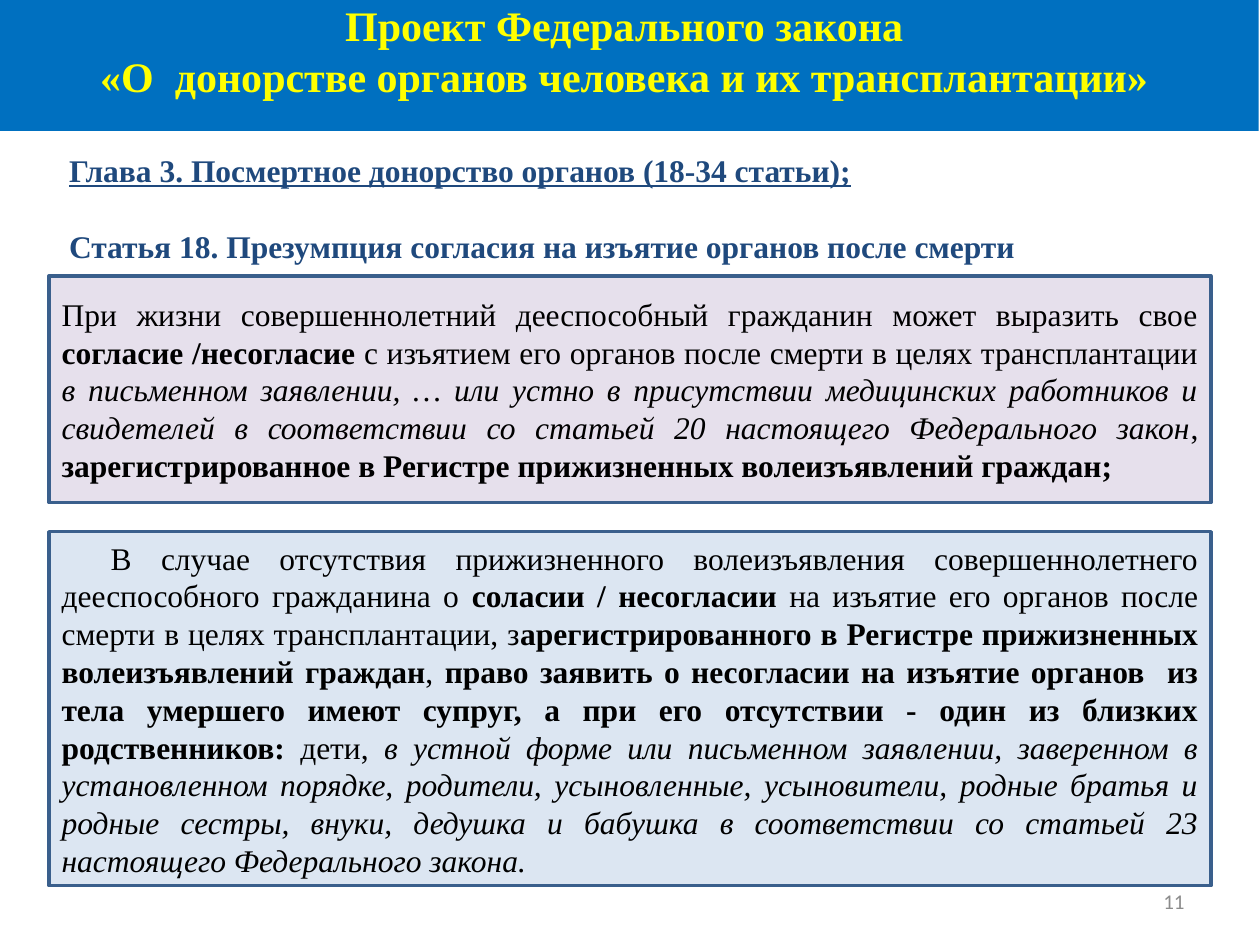
from dataclasses import dataclass
from typing import Optional

import pptx
import pptx.dml.color
import pptx.enum.shapes
import pptx.enum.text
import pptx.util

RGBColor = pptx.dml.color.RGBColor
Inches = pptx.util.Inches
Pt = pptx.util.Pt
Align = pptx.enum.text.PP_ALIGN
Anchor = pptx.enum.text.MSO_ANCHOR

BLUE = RGBColor(0x00, 0x70, 0xC0)
YELLOW = RGBColor(0xFF, 0xFF, 0x00)
NAVY = RGBColor(0x1F, 0x49, 0x7D)
BORDER = RGBColor(0x3A, 0x5F, 0x8C)
LILAC = RGBColor(0xE6, 0xE0, 0xEC)
PALE_BLUE = RGBColor(0xDC, 0xE6, 0xF2)
BLACK = RGBColor(0x00, 0x00, 0x00)
GRAY = RGBColor(0x8C, 0x8C, 0x8C)


@dataclass
class Span:
    text: str
    bold: bool = False
    italic: bool = False


@dataclass
class Panel:
    top: float
    height: float
    fill: RGBColor
    indent: float
    spans: list[Span]


PANELS = [
    Panel(2.19, 1.8, LILAC, 0, [
        Span("При жизни совершеннолетний дееспособный гражданин может выразить свое "),
        Span("согласие /несогласие ", bold=True),
        Span("с изъятием его органов после смерти в целях трансплантации "),
        Span("в письменном заявлении, … или устно в присутствии медицинских работников "
             "и свидетелей в соответствии со статьей 20 настоящего Федерального закон",
             italic=True),
        Span(", "),
        Span("зарегистрированное в Регистре прижизненных волеизъявлений граждан;", bold=True),
    ]),
    Panel(4.22, 2.81, PALE_BLUE, 0.39, [
        Span("В случае отсутствия прижизненного волеизъявления совершеннолетнего "
             "дееспособного гражданина о "),
        Span("соласии / несогласии ", bold=True),
        Span("на изъятие его органов после смерти в целях трансплантации, з"),
        Span("арегистрированного в Регистре прижизненных волеизъявлений граждан", bold=True),
        Span(", "),
        Span("право заявить о несогласии на изъятие органов  из тела умершего имеют супруг, "
             "а при его отсутствии - один из близких родственников: ", bold=True),
        Span("дети, "),
        Span("в устной форме или письменном заявлении, заверенном в установленном порядке, "
             "родители, усыновленные, усыновители, родные братья и родные сестры, внуки, "
             "дедушка и бабушка в соответствии со статьей 23 настоящего Федерального закона.",
             italic=True),
    ]),
]


def add_span(para, text: str, *, size: float = 18, font: str = "Times New Roman",
             color: RGBColor = BLACK, bold: bool = False, italic: bool = False,
             underline: bool = False) -> None:
    span = para.add_run()
    span.text = text
    span.font.size = Pt(size)
    span.font.name = font
    span.font.color.rgb = color
    span.font.bold = bold
    span.font.italic = italic
    span.font.underline = underline


def add_rectangle(page, left: float, top: float, width: float, height: float,
                  fill: RGBColor, line: Optional[RGBColor] = None):
    box = page.shapes.add_shape(pptx.enum.shapes.MSO_SHAPE.RECTANGLE, Inches(left),
                                Inches(top), Inches(width), Inches(height))
    box.shadow.inherit = False
    box.fill.solid()
    box.fill.fore_color.rgb = fill
    if line is None:
        box.line.fill.background()
    else:
        box.line.color.rgb = line
        box.line.width = Pt(2)
    box.text_frame.word_wrap = True
    return box


def add_text_box(page, left: float, top: float, width: float, height: float):
    box = page.shapes.add_textbox(Inches(left), Inches(top), Inches(width), Inches(height))
    box.text_frame.word_wrap = True
    return box


def set_indent(para, indent: float) -> None:
    para._p.get_or_add_pPr().set("indent", str(Inches(indent)))


def add_title(page) -> None:
    frame = add_rectangle(page, 0, 0, 9.99, 1.04, BLUE).text_frame
    frame.vertical_anchor = Anchor.TOP
    frame.margin_top = frame.margin_bottom = 0
    lines = ["Проект Федерального закона ",
             "«О  донорстве органов человека и их трансплантации» "]
    for index, line in enumerate(lines):
        para = frame.add_paragraph() if index else frame.paragraphs[0]
        para.alignment = Align.CENTER
        add_span(para, line, size=24, color=YELLOW, bold=True)


def add_headings(page) -> None:
    frame = add_text_box(page, 0.43, 1.15, 9.37, 3.5).text_frame
    chapter = frame.paragraphs[0]
    add_span(chapter, "Глава 3. Посмертное донорство органов (18-34 статьи);",
             color=NAVY, bold=True, underline=True)
    article = frame.add_paragraph()
    article.space_before = Pt(21.6)
    add_span(article, "Статья 18. Презумпция согласия на изъятие органов после смерти",
             color=NAVY, bold=True)
    for para in frame.paragraphs:
        set_indent(para, 0.02)


def add_panel(page, panel: Panel) -> None:
    box = add_rectangle(page, 0.39, panel.top, 9.22, panel.height, panel.fill, BORDER)
    box.text_frame.vertical_anchor = Anchor.MIDDLE
    para = box.text_frame.paragraphs[0]
    para.alignment = Align.JUSTIFY
    set_indent(para, panel.indent)
    for span in panel.spans:
        add_span(para, span.text, bold=span.bold, italic=span.italic)


def add_page_number(page) -> None:
    frame = add_text_box(page, 7.17, 6.95, 2.33, 0.4).text_frame
    frame.vertical_anchor = Anchor.MIDDLE
    para = frame.paragraphs[0]
    para.alignment = Align.RIGHT
    add_span(para, "11", size=12, font="Calibri", color=GRAY)


def main() -> None:
    deck = pptx.Presentation()
    deck.slide_width = Inches(10)
    deck.slide_height = Inches(7.5)
    page = deck.slides.add_slide(deck.slide_layouts[6])
    add_page_number(page)
    add_title(page)
    add_headings(page)
    for panel in PANELS:
        add_panel(page, panel)
    deck.save("out.pptx")


if __name__ == "__main__":
    main()
